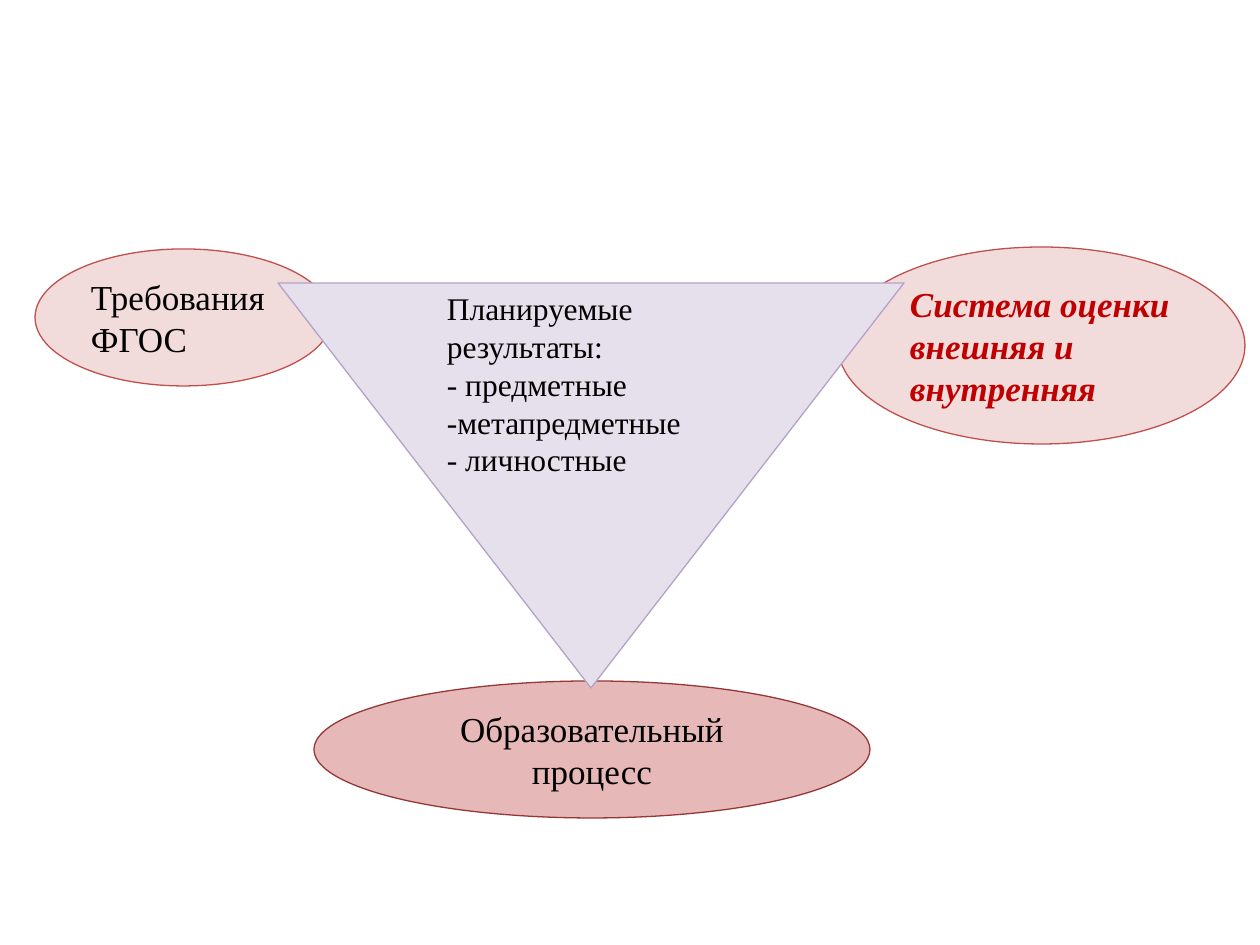
from dataclasses import dataclass

from pptx import Presentation
from pptx.dml.color import RGBColor
from pptx.enum.shapes import MSO_SHAPE
from pptx.enum.text import MSO_ANCHOR, MSO_AUTO_SIZE, PP_ALIGN
from pptx.util import Emu, Pt

PX = 914400 // 126
HUES = {
    "pink": "F2DCDB", "red": "C0504D", "rose": "E6B9B8", "wine": "953735",
    "lilac": "E6E0EC", "violet": "B3A2C7", "black": "000000", "alert": "C00000",
}
FRAME = {
    "word_wrap": True,
    "auto_size": MSO_AUTO_SIZE.SHAPE_TO_FIT_TEXT,
    "vertical_anchor": MSO_ANCHOR.TOP,
}
PLAIN = {"name": "Times New Roman", "size": Pt(20)}
SMALL = PLAIN | {"size": Pt(18)}
STRONG = PLAIN | {"bold": True, "italic": True}


@dataclass(frozen=True)
class Node:
    box: tuple[int, int, int, int]
    fill: str
    line: str
    text: tuple[str, ...]
    font: dict
    ink: str = "black"
    align: PP_ALIGN = PP_ALIGN.LEFT
    kind: MSO_SHAPE = MSO_SHAPE.OVAL


NODES = (
    Node((35, 249, 297, 137), "pink", "red", ("Требования ФГОС",), PLAIN),
    Node((838, 247, 407, 197), "pink", "red",
         ("Система оценки", "внешняя и внутренняя"), STRONG, ink="alert"),
    Node((314, 681, 556, 137), "rose", "wine", ("Образовательный процесс",),
         PLAIN, align=PP_ALIGN.CENTER),
    Node((278, 283, 626, 405), "lilac", "violet",
         ("Планируемые результаты:", "- предметные", "-метапредметные", "- личностные"),
         SMALL, kind=MSO_SHAPE.FLOWCHART_MERGE),
)


def hue(name: str) -> RGBColor:
    return RGBColor.from_string(HUES[name])


def style(item: object, form: dict) -> None:
    for key, value in form.items():
        setattr(item, key, value)


def draw(slide, node: Node) -> None:
    shape = slide.shapes.add_shape(node.kind, *(Emu(n * PX) for n in node.box))
    shape.shadow.inherit = False
    shape.fill.solid()
    shape.fill.fore_color.rgb = hue(node.fill)
    shape.line.color.rgb = hue(node.line)
    shape.line.width = Pt(0.75)
    frame = shape.text_frame
    style(frame, FRAME)
    for i, words in enumerate(node.text):
        para = frame.add_paragraph() if i else frame.paragraphs[0]
        para.alignment = node.align
        run = para.add_run()
        run.text = words
        style(run.font, node.font)
        run.font.color.rgb = hue(node.ink)


def main() -> None:
    deck = Presentation()
    style(deck, {"slide_width": Emu(1260 * PX), "slide_height": Emu(945 * PX)})
    slide = deck.slides.add_slide(deck.slide_layouts[6])
    for node in NODES:
        draw(slide, node)
    deck.save("out.pptx")


if __name__ == "__main__":
    main()
